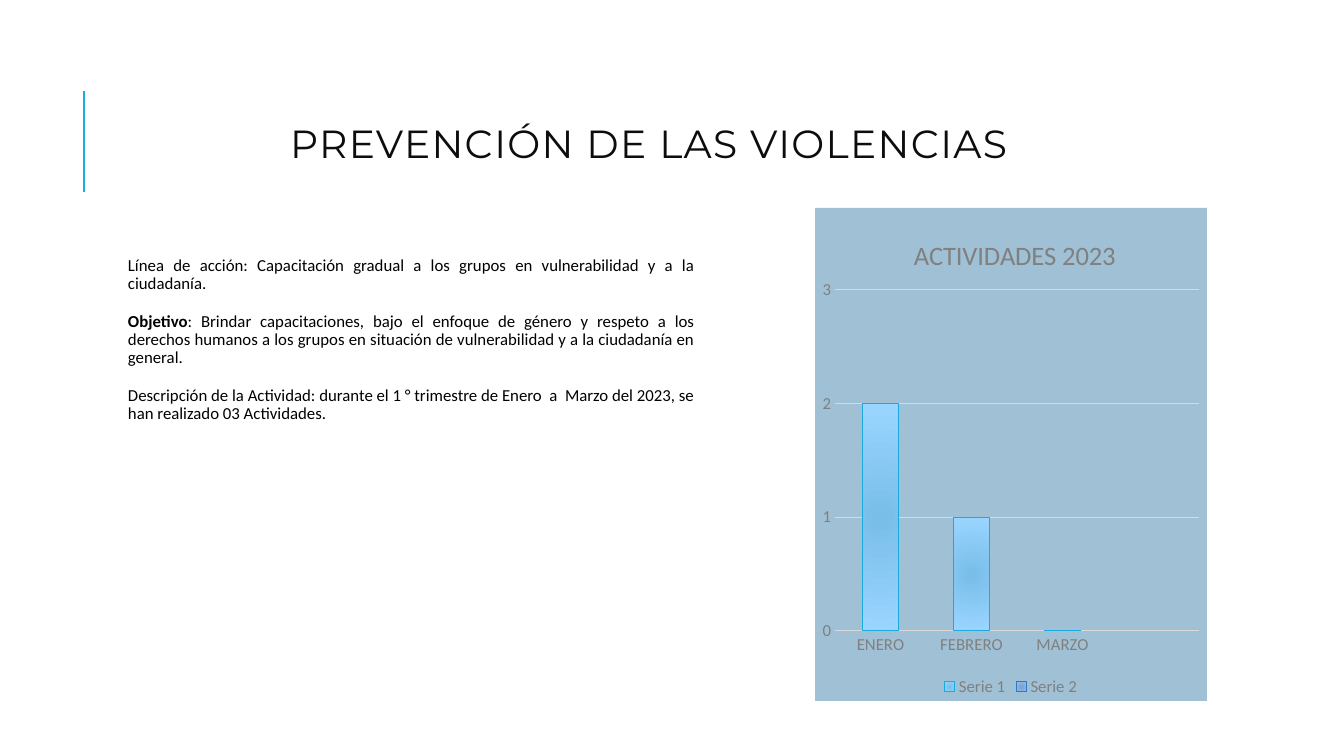
from lxml import etree
from pptx import Presentation
from pptx.chart.data import CategoryChartData
from pptx.dml.color import RGBColor
from pptx.enum.chart import XL_CHART_TYPE, XL_LEGEND_POSITION, XL_TICK_MARK
from pptx.enum.shapes import MSO_CONNECTOR
from pptx.enum.text import MSO_ANCHOR, MSO_AUTO_SIZE, PP_ALIGN
from pptx.oxml import parse_xml
from pptx.oxml.ns import nsdecls, qn
from pptx.util import Pt

STACKED = XL_CHART_TYPE.COLUMN_STACKED
BOTTOM = XL_LEGEND_POSITION.BOTTOM
NO_TICK = XL_TICK_MARK.NONE
STRAIGHT = MSO_CONNECTOR.STRAIGHT
TOP, MIDDLE = MSO_ANCHOR.TOP, MSO_ANCHOR.MIDDLE
NO_FIT = MSO_AUTO_SIZE.NONE
CENTER, JUSTIFY = PP_ALIGN.CENTER, PP_ALIGN.JUSTIFY

TITLE = "PREVENCIÓN DE LAS VIOLENCIAS"
BODY = [
    [("Línea de acción: Capacitación gradual a los grupos en vulnerabilidad "
      "y a la ciudadanía.", False)],
    [("Objetivo", True),
     (": Brindar capacitaciones, bajo el enfoque de género y respeto a los "
      "derechos humanos a los grupos en situación de vulnerabilidad y a la "
      "ciudadanía en general.", False)],
    [("Descripción de la Actividad: durante el 1 ° trimestre de Enero  a  "
      "Marzo del 2023, se han realizado 03 Actividades.", False)],
]
HEADING = "ACTIVIDADES 2023"
MONTHS = ["ENERO", "FEBRERO", "MARZO", ""]
# name, values, inner colour, outer colour, line colour
SERIES = [
    ("Serie 1", [2, 1, 0, None], "78BEE9", "9AD5FF", "1BA9DF"),
    ("Serie 2", [None] * 4, "79A1D1", "9EBEEB", "2580C2"),
]

# Places in px: left, top, width, height
SLIDE = (1344, 756)
TITLE_BOX = (113, 65, 1072, 165)
BODY_BOX = (113, 252, 587, 311)
CHART_BOX = (815, 208, 392, 493)
PLOT_BOX = (835, 290, 364, 341)
HEAD_AT = (908, 232)
RULE = (84, 192, 84, 91)
INSET, INDENT = 5, 10


def px(n):
    return round(n * 914400 / 100.8)


def rgb(code):
    return RGBColor.from_string(code)


def style(font, size, color, name="Calibri", bold=False):
    font.size, font.name, font.bold = Pt(size), name, bold
    font.color.rgb = rgb(color)


def place(shape, box):
    shape.left, shape.top, shape.width, shape.height = map(px, box)


def pin(parent, box, inner=False):
    """Fix a chart part at a px box, or at a px point, within the chart."""
    x, y, w, h = CHART_BOX
    parts = [(box[0] - x) / w, (box[1] - y) / h]
    parts += [n / side for n, side in zip(box[2:], (w, h))]
    tags = '<c:layoutTarget val="inner"/>' if inner else ""
    tags += '<c:xMode val="edge"/><c:yMode val="edge"/>'
    for tag, part in zip("xywh", parts):
        tags += f'<c:{tag} val="{part:.2f}"/>' if not inner else f'<c:{tag} val="{part:.3f}"/>'
    for old in parent.findall(qn("c:layout")):
        parent.remove(old)
    layout = parse_xml(f'<c:layout {nsdecls("c")}><c:manualLayout>{tags}'
                       '</c:manualLayout></c:layout>')
    text = parent.find(qn("c:tx"))
    if text is None:
        parent.insert(0, layout)
    else:
        text.addnext(layout)


def glow(form, inner, outer):
    """Fill a series with a gradient that runs out from its centre."""
    form.fill.gradient()
    grad = form._element.spPr.find(qn("a:gradFill"))
    new = parse_xml(
        f'<a:gradFill {nsdecls("a")} rotWithShape="1"><a:gsLst>'
        f'<a:gs pos="0"><a:srgbClr val="{inner}"/></a:gs>'
        f'<a:gs pos="100000"><a:srgbClr val="{outer}"/></a:gs></a:gsLst>'
        '<a:path path="circle"><a:fillToRect l="50000" t="50000" r="50000" '
        'b="50000"/></a:path></a:gradFill>')
    grad.getparent().replace(grad, new)


def add_rule(slide):
    rule = slide.shapes.add_connector(STRAIGHT, *map(px, RULE))
    rule.line.color.rgb = rgb("1CADE4")
    rule.line.width = Pt(1.5)
    etree.SubElement(rule._element.spPr, qn("a:effectLst"))


def fill_title(shape):
    place(shape, TITLE_BOX)
    frame = shape.text_frame
    frame.auto_size, frame.vertical_anchor = NO_FIT, MIDDLE
    para = frame.paragraphs[0]
    para.alignment, para.line_spacing = CENTER, 0.8
    run = para.add_run()
    run.text = TITLE
    style(run.font, 28, "0D0D0D", "Montserrat")
    run.font._element.set("spc", "100")


def fill_body(shape):
    place(shape, BODY_BOX)
    frame = shape.text_frame
    frame.auto_size, frame.vertical_anchor = NO_FIT, TOP
    frame.margin_left = frame.margin_right = px(INSET)
    frame.margin_top = frame.margin_bottom = px(INSET)
    for i, runs in enumerate(BODY):
        para = frame.add_paragraph() if i else frame.paragraphs[0]
        para.alignment, para.line_spacing = JUSTIFY, 0.9
        para.space_before, para.space_after = Pt(12), Pt(2)
        props = para._p.get_or_add_pPr()
        props.set("marL", str(px(INDENT)))
        props.set("indent", str(-px(INDENT)))
        etree.SubElement(props, qn("a:buChar")).set("char", " ")
        for text, bold in runs:
            run = para.add_run()
            run.text = text
            style(run.font, 12, "000000", bold=bold)


def add_bars(slide):
    data = CategoryChartData()
    data.categories = MONTHS
    for name, values, *_ in SERIES:
        data.add_series(name, values)
    chart = slide.shapes.add_chart(STACKED, *map(px, CHART_BOX), data).chart
    style(chart.font, 10, "000000")

    chart.has_title = True
    run = chart.chart_title.text_frame.paragraphs[0].add_run()
    run.text = HEADING
    style(run.font, 19, "808080")
    pin(chart.chart_title._element, HEAD_AT)

    chart.has_legend = True
    chart.legend.position, chart.legend.include_in_layout = BOTTOM, False
    style(chart.legend.font, 12, "808080")

    for axis in (chart.category_axis, chart.value_axis):
        axis.major_tick_mark = axis.minor_tick_mark = NO_TICK
        axis.format.line.fill.background()
        style(axis.tick_labels.font, 12, "808080")
    scale = chart.value_axis
    scale.minimum_scale, scale.maximum_scale, scale.major_unit = 0, 3, 1
    grid = scale.major_gridlines.format.line
    grid.color.rgb, grid.width = rgb("D9D9D9"), Pt(0.75)

    plot = chart.plots[0]
    plot.gap_width, plot.overlap, plot.vary_by_categories = 150, 100, False
    for series, (_, _, inner, outer, edge) in zip(plot.series, SERIES):
        series.format.line.color.rgb = rgb(edge)
        series.format.line.width = Pt(0.75)
        glow_form = series.format
        glow_form.fill.gradient()
        grad = series._element.spPr.find(qn("a:gradFill"))
        grad.getparent().replace(grad, radial(inner, outer))

    space = chart._chartSpace
    pin(space.chart.plotArea, PLOT_BOX, inner=True)
    back = parse_xml(f'<c:spPr {nsdecls("c", "a")}><a:solidFill><a:srgbClr val="A0C1D5"/>'
                     '</a:solidFill><a:ln><a:noFill/></a:ln></c:spPr>')
    space.chart.addnext(back)


def radial(inner, outer):
    """Return a gradient fill that runs out from the centre."""
    return parse_xml(
        f'<a:gradFill {nsdecls("a")} rotWithShape="1"><a:gsLst>'
        f'<a:gs pos="0"><a:srgbClr val="{inner}"/></a:gs>'
        f'<a:gs pos="100000"><a:srgbClr val="{outer}"/></a:gs></a:gsLst>'
        '<a:path path="circle"><a:fillToRect l="50000" t="50000" r="50000" '
        'b="50000"/></a:path></a:gradFill>')


def main():
    deck = Presentation()
    deck.slide_width, deck.slide_height = map(px, SLIDE)
    slide = deck.slides.add_slide(deck.slide_layouts[1])
    add_rule(slide)
    fill_title(slide.shapes.title)
    fill_body(slide.placeholders[1])
    add_bars(slide)
    deck.save("out.pptx")


if __name__ == "__main__":
    main()
